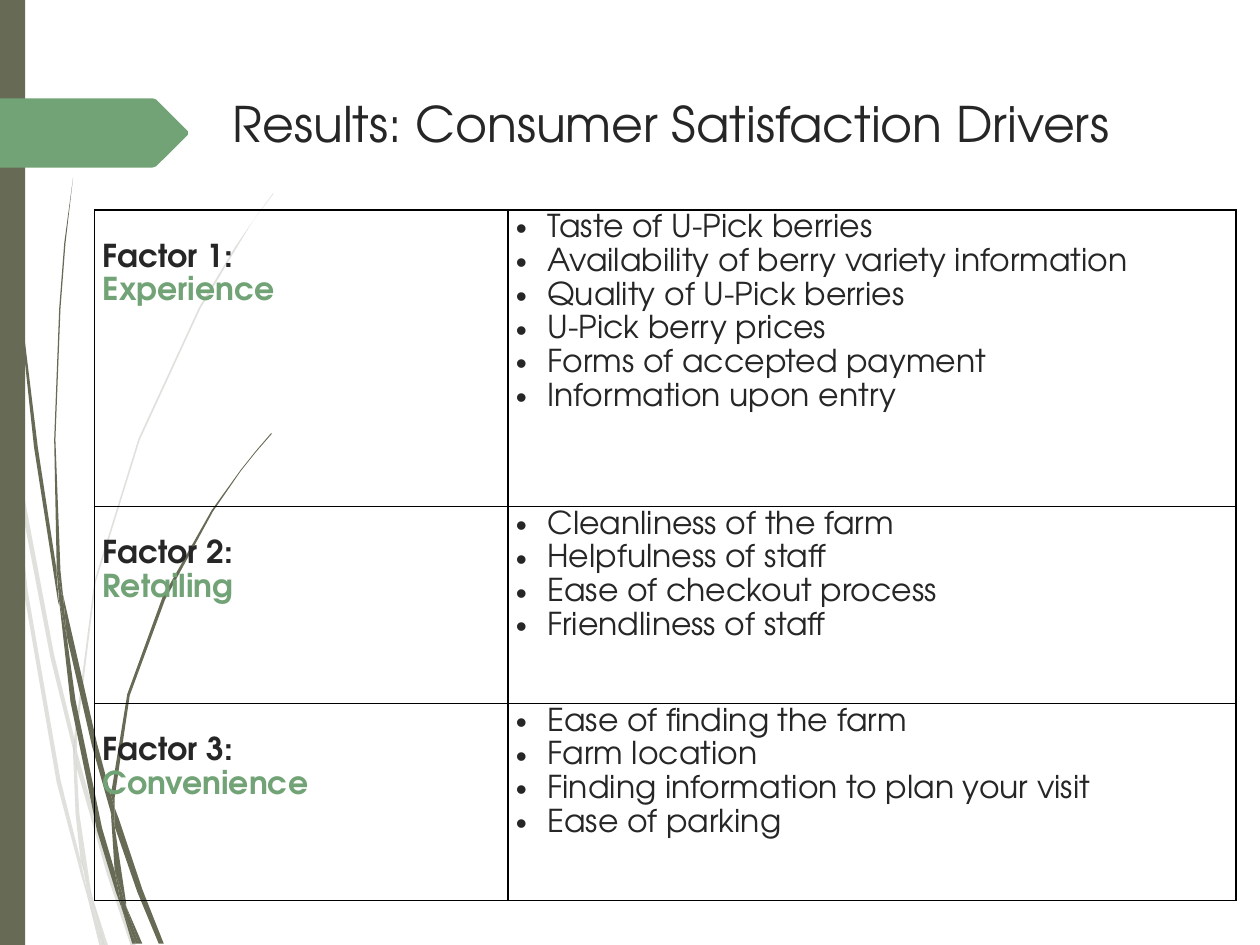
from lxml.etree import SubElement
from pptx import Presentation
from pptx.dml.color import RGBColor
from pptx.enum.shapes import MSO_SHAPE
from pptx.enum.text import MSO_ANCHOR
from pptx.oxml.ns import qn
from pptx.util import Inches, Pt

WIDTH, HEIGHT = Inches(10), Inches(7.5)
COLUMNS, ROWS = 100, 75
FONT = "TeX Gyre Adventor"
INK, GREEN, OLIVE, BLACK = "262626", "72A376", "676A55", "000000"

PALE_BLADES = [
    [(0.8, 35), (0.6, 32.2), (0, 28.2), (0, 29.9), (0.7, 34.4)],
    [(4, 52.2), (5.9, 59.9), (5.9, 58.6), (4.3, 52), (1, 34.5), (1.2, 37.6)],
    [(6.4, 60.7), (6.1, 59.6), (6.1, 61), (8.5, 69.4), (10.4, 75.1),
     (10.8, 75.1), (8.8, 69.2)],
    [(8.3, 75.1), (8.6, 75.1), (7.3, 71.1)],
    [(6.4, 68.3), (4.8, 61.9), (2.2, 46.9), (1.2, 37.6), (0.8, 35),
     (1.9, 47), (4.5, 62.1), (6.4, 69.3), (7, 71.4), (6.9, 70.7)],
    [(5.8, 59.9), (6, 64.6), (6.4, 68.3), (6.7, 69.2), (7.3, 71.1),
     (7.2, 70.6), (6.3, 64.6), (6.1, 61), (6.1, 60.8)],
    [(6.1, 58.4), (7.6, 46.2), (11.1, 34.9), (15.9, 24.5), (18.7, 19.8),
     (20.1, 17.5), (21.7, 15.4), (21.7, 15.3), (20.1, 17.5), (18.6, 19.7),
     (15.8, 24.4), (11, 34.8), (7.5, 46.1), (5.9, 58.4), (5.9, 58.6),
     (6.1, 59.6)],
    [(7, 71.4), (7.9, 75.1), (8.2, 75.1)],
    [(6.1, 60.8), (6.1, 61), (6.1, 59.6), (5.9, 58.6), (5.8, 59.9)],
    [(6.7, 69.2), (6.5, 68.3), (6.9, 70.7), (7, 71.4), (8.2, 75.1),
     (8.3, 75.1), (7.3, 71.1)],
]
DARK_BLADES = [
    [(0.5, 11), (1.4, 23.3), (2.7, 35.5), (4.6, 47.7), (4.7, 48.1),
     (4.5, 45.7), (4.5, 45.3), (3, 35.5), (1.5, 23.2), (0.6, 10.9),
     (0.4, 4.8), (0.3, 0), (0.2, 0), (0.3, 4.8)],
    [(7.3, 59.2), (8.8, 64.5), (8.8, 63.3), (8.8, 63.1), (7.7, 59),
     (5, 47.2), (5.3, 50.5)],
    [(9.4, 64.9), (9.1, 64.1), (9.1, 65.6), (10.9, 70.8), (12.6, 74.9),
     (13, 74.9), (11.3, 70.6)],
    [(9.1, 69.1), (8.1, 65.7), (6, 55.6), (5.3, 50.5), (4.7, 47.7),
     (5.6, 55.7), (7.7, 65.9), (9.2, 70.8), (9.7, 72.2), (9.6, 71.7)],
    [(5, 47.2), (4.8, 45.3), (4.4, 34.9), (4.8, 24.5), (5.2, 19.3),
     (5.8, 14.1), (5.1, 19.3), (4.7, 24.5), (4.3, 34.9), (4.5, 44.9),
     (4.9, 47.2)],
    [(11, 74.9), (11.3, 74.9), (10, 71.9)],
    [(4.7, 47.7), (5.3, 50.5), (5, 47.2), (4.9, 47.2), (4.5, 44.9), (4.5, 45.3)],
    [(9.1, 63.3), (10.3, 55.2), (13.1, 47.6), (16.9, 40.6), (19.1, 37.4),
     (20.3, 35.9), (21.6, 34.4), (21.5, 34.4), (20.3, 35.8), (19.1, 37.3),
     (16.8, 40.5), (12.9, 47.4), (10.1, 55.1), (8.8, 63.1), (9.1, 64.1)],
    [(9.7, 72.2), (10.5, 74.9), (10.8, 74.9)],
    [(8.8, 64.5), (9.1, 69.1), (9.6, 70.6), (10, 71.9), (10, 71.6),
     (9.1, 65.6), (9, 65.1)],
    [(8.8, 64.5), (9, 65.1), (9.1, 65.6), (9.1, 64.1), (8.8, 63.1), (8.8, 63.3)],
    [(9.6, 70.6), (9.1, 69.1), (9.6, 71.7), (9.7, 72.2), (10.8, 74.9),
     (11, 74.9), (10, 71.9)],
]
ARROW = [(14.9, 10.7), (12.4, 13.2), (12.1, 13.3), (0, 13.3), (0, 7.8),
         (12.1, 7.8), (12.4, 7.9), (14.9, 10.4)]
FACTORS = [
    ("Factor 1:", "Experience", [
        "Taste of U-Pick berries", "Availability of berry variety information",
        "Quality of U-Pick berries", "U-Pick berry prices",
        "Forms of accepted payment", "Information upon entry"]),
    ("Factor 2:", "Retailing", [
        "Cleanliness of the farm", "Helpfulness of staff",
        "Ease of checkout process", "Friendliness of staff"]),
    ("Factor 3:", "Convenience", [
        "Ease of finding the farm", "Farm location",
        "Finding information to plan your visit", "Ease of parking"]),
]


def column(count):
    return round(WIDTH * count / COLUMNS)


def row(count):
    return round(HEIGHT * count / ROWS)


def box(left, top, width, height):
    return column(left), row(top), column(width), row(height)


def color(value):
    return RGBColor.from_string(value)


def paint(shape, value):
    shape.shadow.inherit = False
    shape.fill.solid()
    shape.fill.fore_color.rgb = color(value)
    shape.line.fill.background()


def add_outline(slide, points, fill, opacity=100):
    corners = [(column(x), row(y)) for x, y in points]
    builder = slide.shapes.build_freeform(*corners[0])
    builder.add_line_segments(corners[1:], close=True)
    shape = builder.convert_to_shape()
    paint(shape, fill)
    if opacity < 100:
        fill_color = shape.fill._xPr.find(qn("a:solidFill"))[0]
        SubElement(fill_color, qn("a:alpha"), val=str(opacity * 1000))


def add_side_bar(slide):
    paint(slide.shapes.add_shape(MSO_SHAPE.RECTANGLE, *box(0, 0, 2, ROWS)), OLIVE)


def format_paragraph(paragraph, size, fill, bold=False):
    for run in paragraph.runs:
        run.font.name = FONT
        run.font.size = Pt(size)
        run.font.bold = bold
        run.font.color.rgb = color(fill)


def add_title(slide, text):
    shape = slide.shapes.add_textbox(*box(17.5, 6.9, 72.1, 14))
    shape.text_frame.word_wrap = True
    shape.text_frame.text = text
    format_paragraph(shape.text_frame.paragraphs[0], 28, INK)


def add_bullet(paragraph):
    properties = paragraph._p.get_or_add_pPr()
    indent = column(2.5)
    properties.set("marL", str(indent))
    properties.set("indent", str(-indent))
    SubElement(properties, qn("a:buFont"), typeface="Arial")
    SubElement(properties, qn("a:buChar"), char="•")


def style_cell(cell):
    cell.margin_left = cell.margin_right = column(0.65)
    cell.margin_top = cell.margin_bottom = 0
    cell.vertical_anchor = MSO_ANCHOR.TOP
    properties = cell._tc.get_or_add_tcPr()
    for side in ("a:lnL", "a:lnR", "a:lnT", "a:lnB"):
        border = SubElement(properties, qn(side), w=str(Pt(1)))
        fill = SubElement(border, qn("a:solidFill"))
        SubElement(fill, qn("a:srgbClr"), val=BLACK)
    cell.fill.background()


def fill_cell(cell, lines):
    style_cell(cell)
    cell.text_frame.text = "\n".join(lines)
    for paragraph in cell.text_frame.paragraphs:
        paragraph.line_spacing = 1.15
    return cell.text_frame.paragraphs


def add_factor_table(slide):
    frame = slide.shapes.add_table(len(FACTORS), 2, *box(7.5, 16.65, 90.6, 54.8))
    table = frame.table
    table.first_row = table.horz_banding = False
    for table_column, width in zip(table.columns, (32.8, 57.8)):
        table_column.width = column(width)
    for index, (factor, name, drivers) in enumerate(FACTORS):
        table.rows[index].height = row(15.63 if index else 23.55)
        label = table.cell(index, 0)
        heading, subject = fill_cell(label, [factor, name])
        label.margin_top = row(2.35)
        format_paragraph(heading, 18, INK, True)
        format_paragraph(subject, 18, GREEN, True)
        for paragraph in fill_cell(table.cell(index, 1), drivers):
            format_paragraph(paragraph, 18, INK)
            add_bullet(paragraph)


def main():
    presentation = Presentation()
    presentation.slide_width, presentation.slide_height = WIDTH, HEIGHT
    slide = presentation.slides.add_slide(presentation.slide_layouts[6])
    for blades, opacity in ((PALE_BLADES, 20), (DARK_BLADES, 100)):
        for points in blades:
            add_outline(slide, points, OLIVE, opacity)
    add_side_bar(slide)
    add_outline(slide, ARROW, GREEN)
    add_title(slide, "Results: Consumer Satisfaction Drivers")
    add_factor_table(slide)
    presentation.save("out.pptx")


if __name__ == "__main__":
    main()
